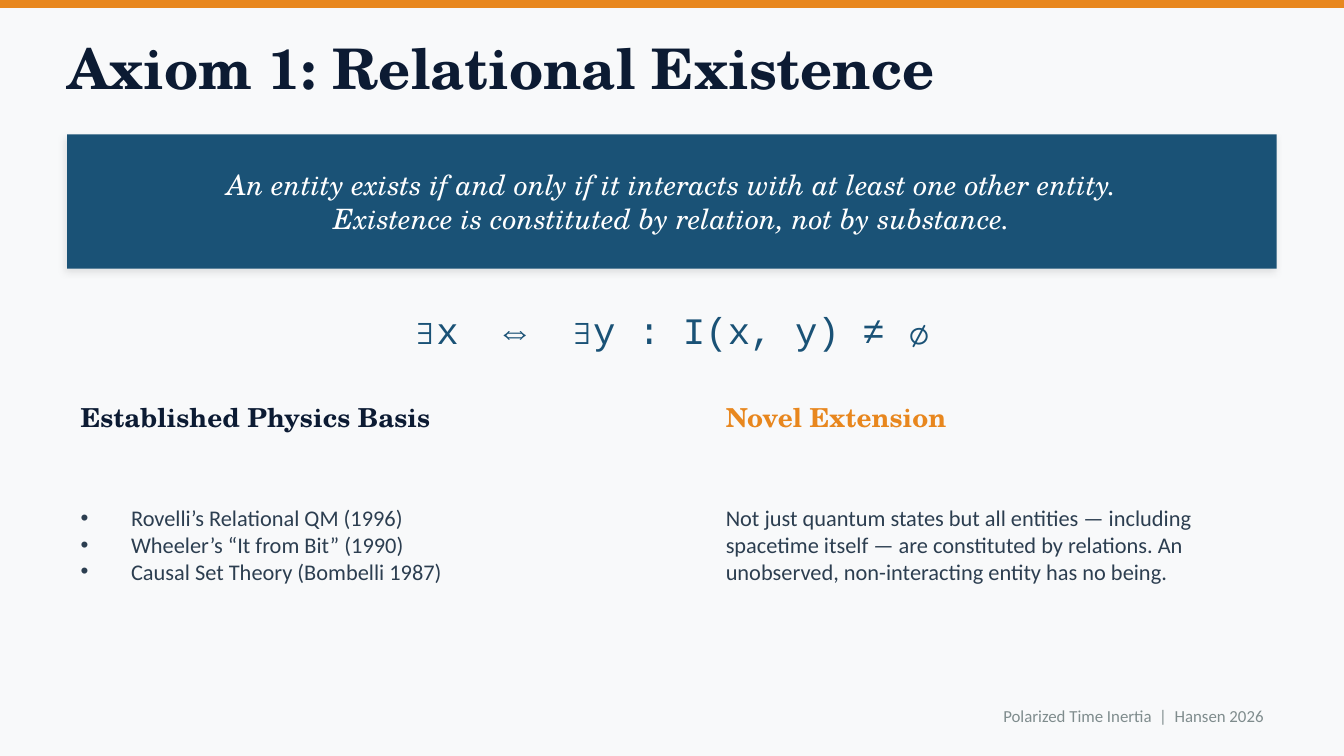
import pptx
import pptx.util
import pptx.dml.color
import pptx.enum.shapes
import pptx.enum.text
from dataclasses import dataclass
from lxml import etree

Pt = pptx.util.Pt
Align = pptx.enum.text.PP_ALIGN
NS = "http://schemas.openxmlformats.org/drawingml/2006/main"


@dataclass(frozen=True)
class Theme:
    back: str = "F8F9FA"
    navy: str = "0C1B33"
    blue: str = "1A5276"
    gold: str = "E8871E"
    ink: str = "2C3E50"
    gray: str = "7F8C8D"
    white: str = "FFFFFF"
    serif: str = "TeX Gyre Schola"
    sans: str = "Calibri"
    mono: str = "Courier New"
    title: int = 30
    math: int = 20
    quote: int = 15
    head: int = 14
    body: int = 12
    foot: int = 9


theme = Theme()


def paint(fill, color):
    fill.solid()
    fill.fore_color.rgb = pptx.dml.color.RGBColor.from_string(color)


def mark(para, bullet):
    props = para._p.get_or_add_pPr()
    indent = Pt(27) if bullet else 0
    props.set("marL", str(indent))
    props.set("indent", str(-indent))
    if bullet:
        etree.SubElement(props, f"{{{NS}}}buChar", char="•")
    else:
        etree.SubElement(props, f"{{{NS}}}buNone")


def write(shape, box, lines, face, size, color, align=Align.LEFT,
          bold=False, italic=False, bullet=False, inset=True):
    shape.left, shape.top, shape.width, shape.height = map(Pt, box)
    frame = shape.text_frame
    frame.word_wrap = True
    frame.auto_size = pptx.enum.text.MSO_AUTO_SIZE.NONE
    frame.vertical_anchor = pptx.enum.text.MSO_ANCHOR.MIDDLE
    if not inset:
        frame.margin_left = frame.margin_right = 0
        frame.margin_top = frame.margin_bottom = 0
    frame.text = "\n".join(lines)
    for para in frame.paragraphs:
        mark(para, bullet)
        para.alignment = align
        para.space_before = Pt(0)
        font = para.font
        font.name, font.size = face, Pt(size)
        font.bold, font.italic = bold, italic
        font.color.rgb = pptx.dml.color.RGBColor.from_string(color)


def label(slide, box, *args, **style):
    write(slide.shapes.add_textbox(*map(Pt, box)), box, *args, **style)


def panel(slide, box, color):
    shape = slide.shapes.add_shape(
        pptx.enum.shapes.MSO_SHAPE.RECTANGLE, *map(Pt, box))
    shape.shadow.inherit = False
    paint(shape.fill, color)
    shape.line.fill.background()
    return shape


def shade(shape):
    effects = shape._element.spPr.find(f"{{{NS}}}effectLst")
    outer = etree.SubElement(
        effects, f"{{{NS}}}outerShdw", blurRad=str(Pt(4)), dist=str(Pt(2)),
        dir=str(135 * 60000), algn="bl", rotWithShape="0")
    color = etree.SubElement(outer, f"{{{NS}}}srgbClr", val="000000")
    etree.SubElement(color, f"{{{NS}}}alpha", val="10000")


def header(slide, box):
    left, top, width, height = box
    panel(slide, (left, top, width, 4.32), theme.gold)
    write(slide.shapes.title, (left + 36, top + 14.4, width - 72, height - 14.4),
          ["Axiom 1: Relational Existence"], theme.serif, theme.title,
          theme.navy, bold=True, inset=False)


def quote(slide, box):
    left, top, width, height = box
    shade(panel(slide, box, theme.blue))
    label(slide, (left + 14.4, top, width - 28.8, height),
          ["An entity exists if and only if it interacts with at least one other entity.",
           "Existence is constituted by relation, not by substance."],
          theme.serif, theme.quote, theme.white, align=Align.CENTER, italic=True)


def column(slide, box, slot, head, color, lines, bullet):
    left, top, width, height = box
    holders = slide.placeholders
    write(holders[slot], (left, top, width, 28.8), [head],
          theme.serif, theme.head, color, bold=True)
    write(holders[slot + 1], (left, top + 28.8, width, height - 28.8), lines,
          theme.sans, theme.body, theme.ink, bullet=bullet)


def columns(slide, box):
    left, top, width, height = box
    gap = 43.2
    wide = (width - gap) / 2
    parts = [
        ("Established Physics Basis", theme.navy,
         ["Rovelli’s Relational QM (1996)", "Wheeler’s “It from Bit” (1990)",
          "Causal Set Theory (Bombelli 1987)"], True),
        ("Novel Extension", theme.gold,
         ["Not just quantum states but all entities — including spacetime itself "
          "— are constituted by relations. An unobserved, non-interacting entity "
          "has no being."], False),
    ]
    for i, part in enumerate(parts):
        column(slide, (left + i * (wide + gap), top, wide, height),
               1 + 2 * i, *part)


def main():
    deck = pptx.Presentation()
    deck.slide_width, deck.slide_height = Pt(720), Pt(405)
    slide = deck.slides.add_slide(deck.slide_layouts.get_by_name("Comparison"))
    paint(slide.background.fill, theme.back)
    header(slide, (0, 0, 720, 57.6))
    quote(slide, (36, 72, 648, 72))
    label(slide, (144, 158.4, 432, 36), ["∃x  ⇔  ∃y : I(x, y) ≠ ∅"],
          theme.mono, theme.math, theme.blue, align=Align.CENTER)
    columns(slide, (36, 208.8, 648, 136.8))
    label(slide, (36, 370.8, 648, 25.2),
          ["Polarized Time Inertia  |  Hansen 2026"],
          theme.sans, theme.foot, theme.gray, align=Align.RIGHT)
    deck.save("out.pptx")


if __name__ == "__main__":
    main()
